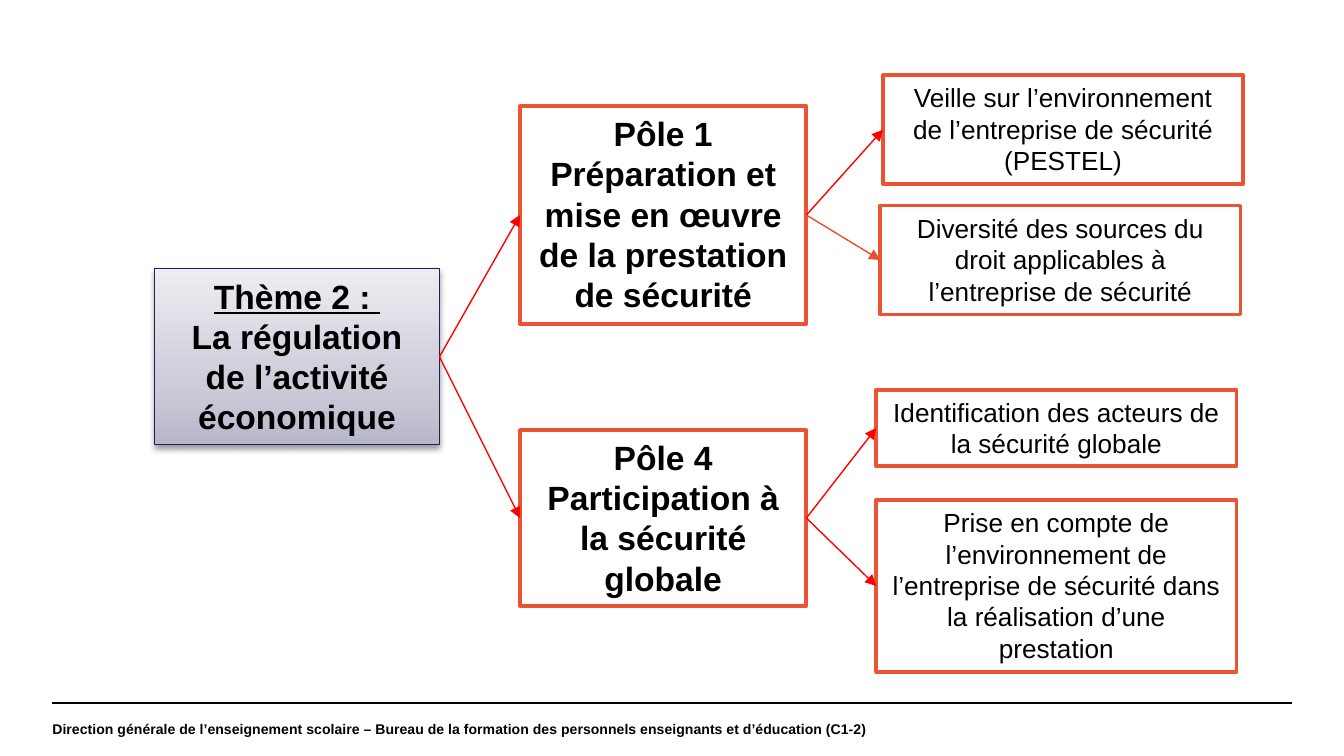
from copy import deepcopy

from lxml.etree import SubElement
from pptx import Presentation
from pptx.dml.color import RGBColor
from pptx.enum.shapes import MSO_CONNECTOR as Connector, MSO_SHAPE as Shape
from pptx.enum.text import MSO_ANCHOR as Anchor, PP_ALIGN as Align
from pptx.oxml.ns import qn
from pptx.util import Inches, Pt

BLACK, WHITE, ORANGE, RED, NAVY = "000000", "FFFFFF", "EA5433", "FF0000", "1F1F59"
FONT = "Arial"
FOOTER = ("Direction générale de l’enseignement scolaire – Bureau de la formation "
          "des personnels enseignants et d’éducation (C1-2)")
THEME = (["Thème 2 : ", "La régulation de l’activité économique"], (1.15, 2, 2.12, 1.31))
THEME_GRADIENT = [(0, "B7B7CA"), (0.35, "CDCDDA"), (1, "ECECF1")]
POLE_LEFT, POLE_WIDTH, TOPIC_WIDTH = 3.87, 2.13, 2.68
POLES = [
    (["Pôle 1", "Préparation et mise en œuvre de la prestation de sécurité"], 0.79, 1.62, [
        ("Veille sur l’environnement de l’entreprise de sécurité (PESTEL)", 6.57, 0.56, 0.81, RED),
        ("Diversité des sources du droit applicables à l’entreprise de sécurité",
         6.55, 1.53, 0.81, "E94F2D"),
    ]),
    (["Pôle 4", "Participation à la sécurité globale"], 3.2, 1.31, [
        ("Identification des acteurs de la sécurité globale", 6.52, 2.9, 0.57, RED),
        ("Prise en compte de l’environnement de l’entreprise de sécurité "
         "dans la réalisation d’une prestation", 6.52, 3.72, 1.28, RED),
    ]),
]


def rgb(color):
    return RGBColor.from_string(color)


def style_font(font, size, bold):
    font.name, font.size, font.bold = FONT, Pt(size), bold
    font.color.rgb = rgb(BLACK)


def add_box(lines, place, size, bold, border=ORANGE, border_width=2):
    box = slide.shapes.add_shape(Shape.RECTANGLE, *map(Inches, place))
    box.shadow.inherit = False
    box.fill.solid()
    box.fill.fore_color.rgb = rgb(WHITE)
    box.line.color.rgb = rgb(border)
    box.line.width = Pt(border_width)
    frame = box.text_frame
    frame.word_wrap = True
    frame.vertical_anchor = Anchor.TOP
    frame.text = "\n".join(lines)
    for paragraph in frame.paragraphs:
        paragraph.alignment = Align.CENTER
        for run in paragraph.runs:
            style_font(run.font, size, bold)
    return box


def add_line(ends, color, width):
    line = slide.shapes.add_connector(Connector.STRAIGHT, *map(Inches, ends))
    line.line.color.rgb = rgb(color)
    line.line.width = Pt(width)
    SubElement(line._element.spPr, qn("a:effectLst"))
    return line


def add_arrow(source, target, color):
    arrow = add_line((0, 0, 1, 1), color, 0.75)
    arrow.begin_connect(source, 3)
    arrow.end_connect(target, 1)
    SubElement(arrow.line._get_or_add_ln(), qn("a:tailEnd"), type="triangle")


def shade_theme(box):
    box.fill.gradient()
    box.fill.gradient_angle = 90
    stop_list = box._element.spPr.find(".//" + qn("a:gsLst"))
    stop_list.append(deepcopy(stop_list[0]))
    for stop, (position, color) in zip(box.fill.gradient_stops, THEME_GRADIENT):
        stop.position = position
        stop.color.rgb = rgb(color)
    effects = box._element.spPr.find(qn("a:effectLst"))
    shadow = SubElement(effects, qn("a:outerShdw"), blurRad=str(Pt(3.1)),
                        dist=str(Pt(1.6)), dir="5400000", rotWithShape="0")
    shadow_color = SubElement(shadow, qn("a:srgbClr"), val=BLACK)
    SubElement(shadow_color, qn("a:alpha"), val="38000")


deck = Presentation()
deck.slide_width = Inches(10)
deck.slide_height = deck.slide_width * 9 // 16
slide = deck.slides.add_slide(deck.slide_layouts[6])

add_line((0.39, 5.23, 9.61, 5.23), BLACK, 0.8)
footer = slide.shapes.add_textbox(*map(Inches, (0.39, 5.23, 9.33, 0.39))).text_frame
footer.word_wrap = True
footer.vertical_anchor = Anchor.MIDDLE
footer.margin_left = footer.margin_right = footer.margin_top = footer.margin_bottom = 0
footer.text = FOOTER
style_font(footer.paragraphs[0].runs[0].font, 7.5, True)

theme_lines, theme_place = THEME
theme = add_box(theme_lines, theme_place, 18, True, NAVY, 0.75)
theme.text_frame.paragraphs[0].runs[0].font.underline = True
shade_theme(theme)

arrows = []
for pole_lines, pole_top, pole_height, topics in POLES:
    pole = add_box(pole_lines, (POLE_LEFT, pole_top, POLE_WIDTH, pole_height), 18, True)
    arrows.append((theme, pole, RED))
    for label, left, top, height, color in topics:
        topic = add_box([label], (left, top, TOPIC_WIDTH, height), 14, False)
        arrows.append((pole, topic, color))

for source, target, color in arrows:
    add_arrow(source, target, color)

deck.save("out.pptx")
